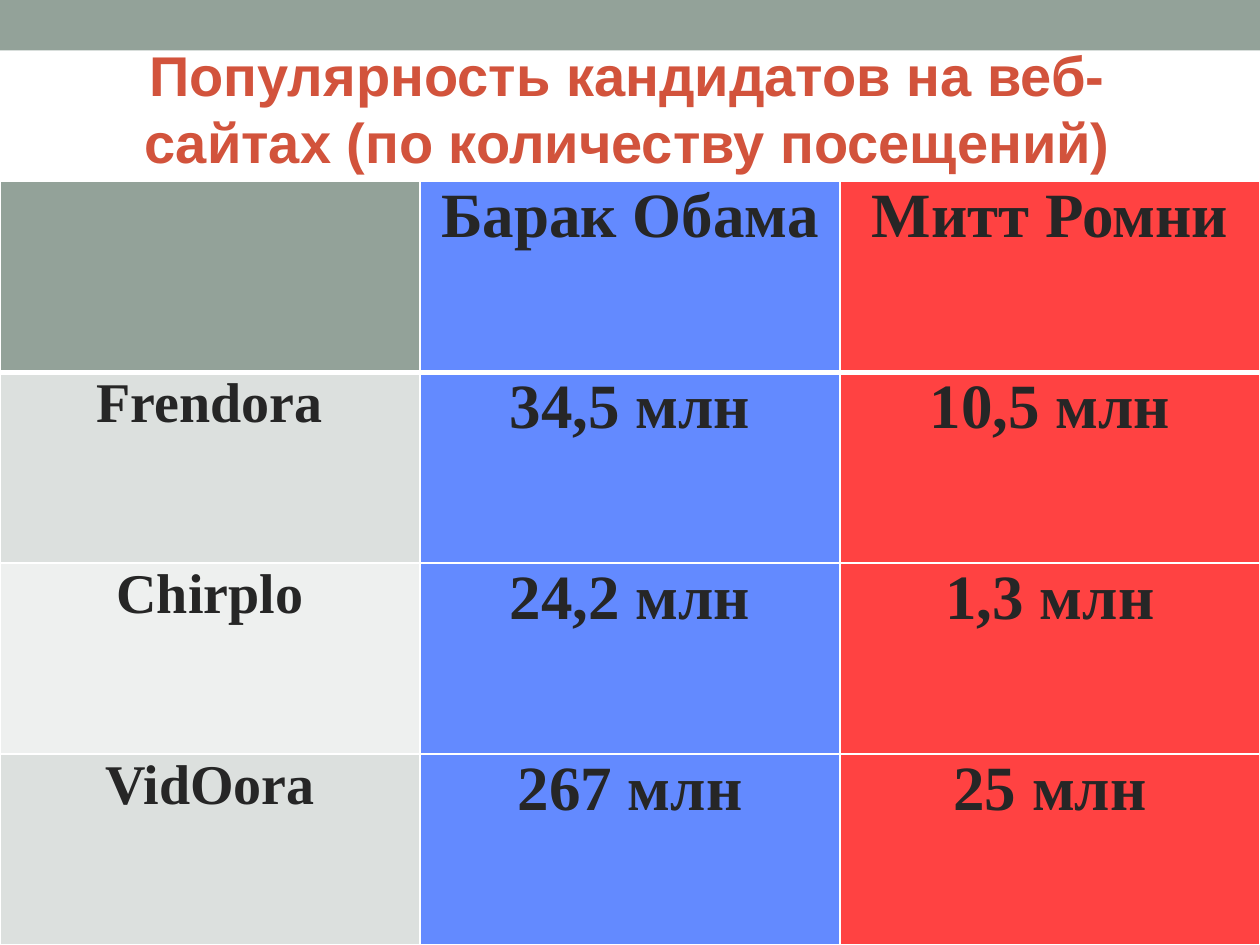
import dataclasses

import lxml.etree
import pptx
import pptx.dml.color
import pptx.enum.shapes
import pptx.enum.text
import pptx.oxml.ns
import pptx.util

Inches = pptx.util.Inches
Pt = pptx.util.Pt
qn = pptx.oxml.ns.qn

HUES = {
    "sage": "93A299",
    "blue": "3366FF",
    "red": "FF0000",
    "gray": "DCE0DE",
    "pale": "EEF0EF",
    "white": "FFFFFF",
    "ink": "262626",
    "rust": "D2533C",
}


@dataclasses.dataclass
class Row:
    site: str
    left: str
    right: str
    hue: str


ROWS = [
    Row("", "Барак Обама", "Митт Ромни", "sage"),
    Row("Frendora", "34,5 млн", "10,5 млн", "gray"),
    Row("Chirplo", "24,2 млн", "1,3 млн", "pale"),
    Row("VidOora", "267 млн", "25 млн", "gray"),
]


def color(name: str) -> pptx.dml.color.RGBColor:
    return pptx.dml.color.RGBColor.from_string(HUES[name])


def write(frame, text: str, *, size: int, font: str, hue: str, after: int = 0) -> None:
    para = frame.paragraphs[0]
    para.alignment = pptx.enum.text.PP_ALIGN.CENTER
    para.space_before = Pt(0)
    para.space_after = Pt(after)
    run = para.add_run()
    run.text = text
    run.font.size = Pt(size)
    run.font.name = font
    run.font.bold = True
    run.font.color.rgb = color(hue)


def paint(cell, hue: str, alpha: int = 100) -> None:
    cell.fill.solid()
    cell.fill.fore_color.rgb = color(hue)
    if alpha < 100:
        tone = cell._tc.tcPr.find(".//" + qn("a:srgbClr"))
        lxml.etree.SubElement(tone, qn("a:alpha"), val=str(alpha * 1000))


def edge(cell, top: int, base: int) -> None:
    sides = {"a:lnL": 1, "a:lnR": 1, "a:lnT": top, "a:lnB": base}
    for spot, (tag, width) in enumerate(sides.items()):
        line = lxml.etree.Element(qn(tag), w=str(Pt(width)))
        fill = lxml.etree.SubElement(line, qn("a:solidFill"))
        lxml.etree.SubElement(fill, qn("a:srgbClr"), val=HUES["white"])
        cell._tc.tcPr.insert(spot, line)


def add_bar(slide) -> None:
    bar = slide.shapes.add_shape(
        pptx.enum.shapes.MSO_SHAPE.RECTANGLE, 0, 0, Inches(10), Inches(0.4)
    )
    bar.shadow.inherit = False
    bar.fill.solid()
    bar.fill.fore_color.rgb = color("sage")
    bar.line.fill.background()


def add_grid(slide, rows: list[Row]) -> None:
    grid = slide.shapes.add_table(
        len(rows), 3, 0, Inches(1.44), Inches(10), Inches(6.06)
    ).table
    for r, row in enumerate(rows):
        parts = [
            (row.site, 32, row.hue, 100),
            (row.left, 36, "blue", 76),
            (row.right, 36, "red", 74),
        ]
        for c, (text, size, hue, alpha) in enumerate(parts):
            cell = grid.cell(r, c)
            cell.margin_left = cell.margin_right = Inches(0.07)
            cell.margin_top = cell.margin_bottom = 0
            paint(cell, hue, alpha)
            edge(cell, top=3 if r == 1 else 1, base=3 if r == 0 else 1)
            if text:
                write(cell.text_frame, text, size=size,
                      font="Times New Roman", hue="ink", after=10)


def add_title(slide, text: str) -> None:
    title = slide.shapes.title
    title.left, title.top = Inches(0.38), Inches(0.26)
    title.width, title.height = Inches(9.2), Inches(1.18)
    frame = title.text_frame
    frame.word_wrap = True
    frame.auto_size = pptx.enum.text.MSO_AUTO_SIZE.SHAPE_TO_FIT_TEXT
    frame.vertical_anchor = pptx.enum.text.MSO_ANCHOR.BOTTOM
    write(frame, text, size=32, font="Arial", hue="rust")
    slide.shapes.element.append(title.element)


def main() -> None:
    deck = pptx.Presentation()
    deck.slide_width, deck.slide_height = Inches(10), Inches(7.5)
    slide = deck.slides.add_slide(deck.slide_layouts.get_by_name("Title Only"))
    add_bar(slide)
    add_grid(slide, ROWS)
    add_title(slide, "Популярность кандидатов на веб-сайтах (по количеству посещений)")
    deck.save("out.pptx")


if __name__ == "__main__":
    main()
